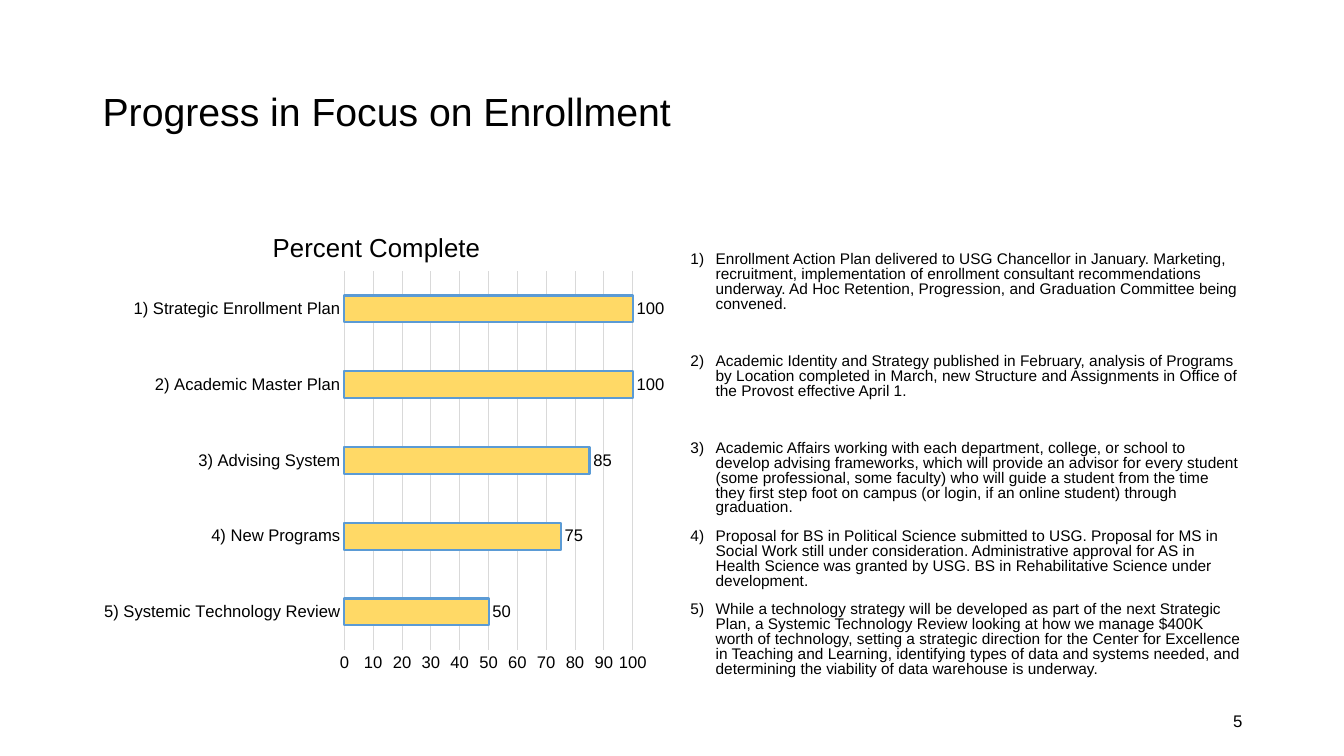
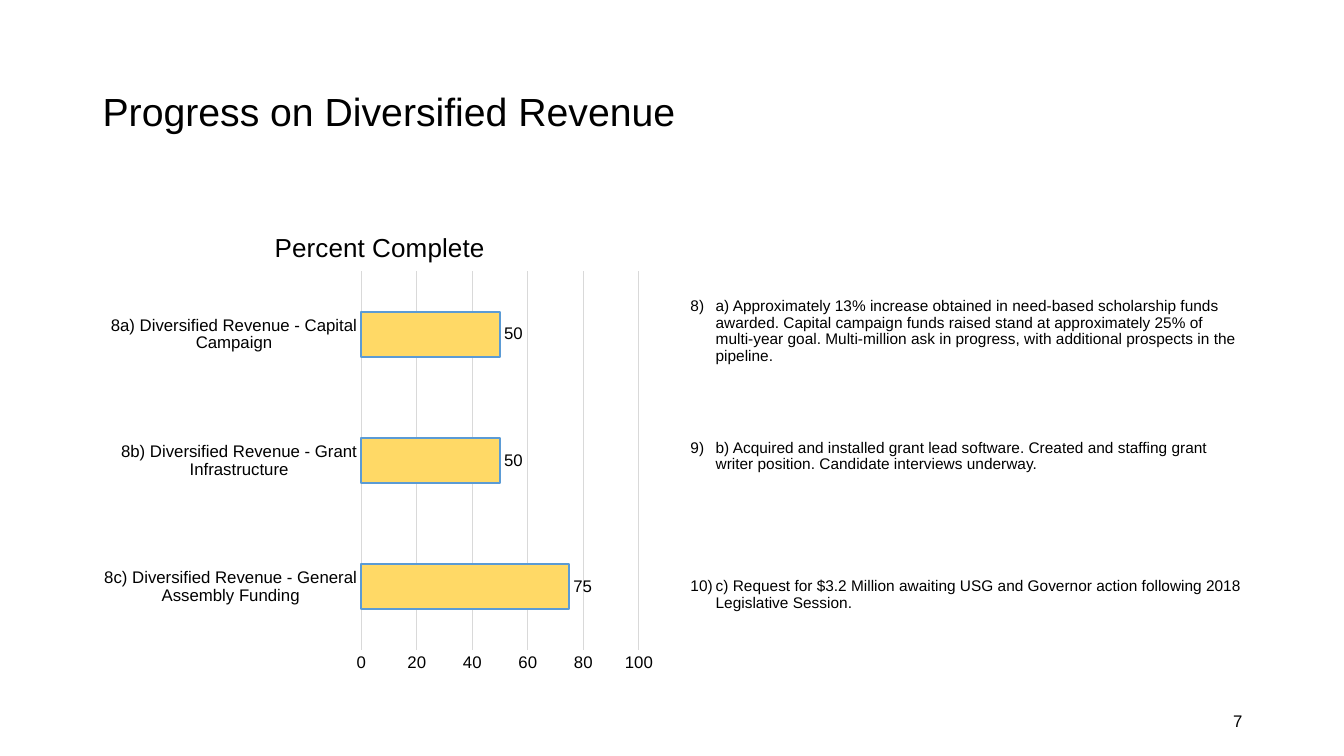
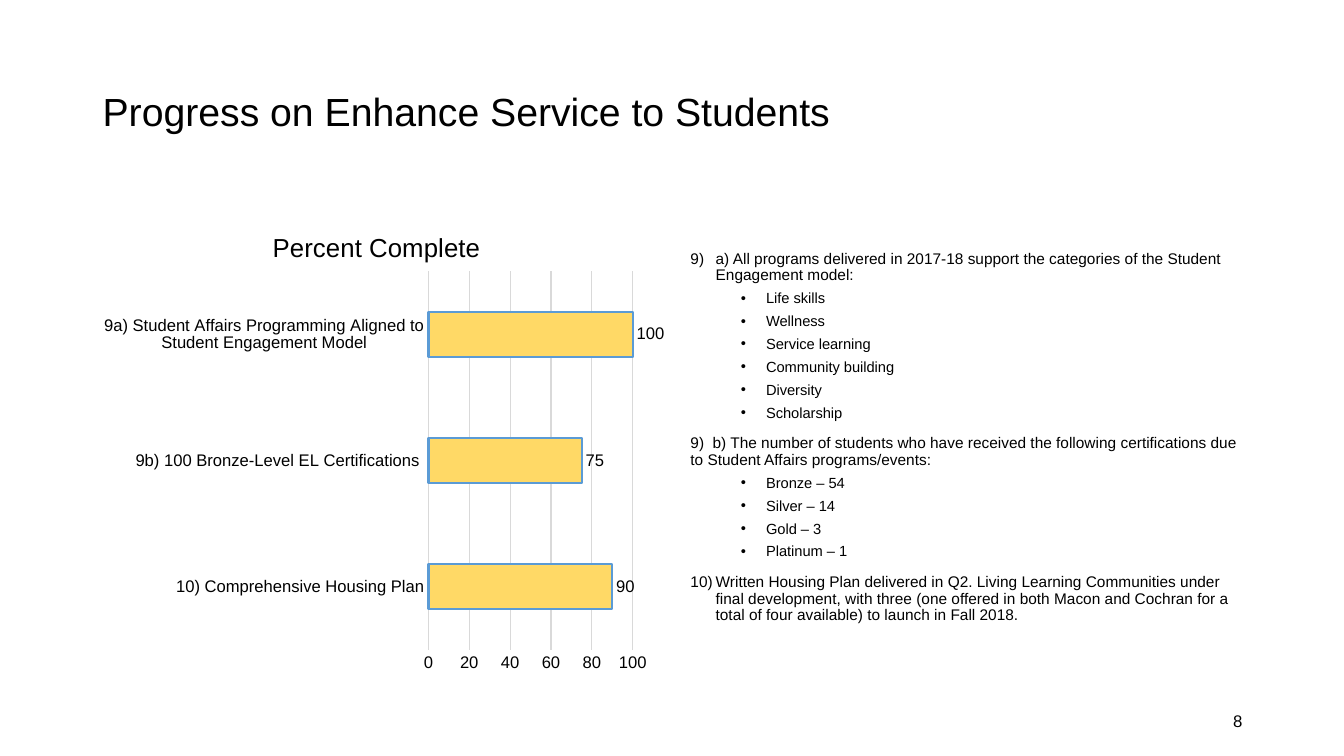
from dataclasses import dataclass
from typing import Optional

import pptx
import pptx.chart.data
import pptx.dml.color
import pptx.enum.chart
import pptx.enum.text
import pptx.oxml
import pptx.oxml.ns
import pptx.util

Inches = pptx.util.Inches
Pt = pptx.util.Pt

COLORS = {"text": "000000", "bar": "FFD966", "bar_edge": "5B9BD5", "grid": "D9D9D9", "paper": "FFFFFF"}
FONT = "Arial"
LINE_HEIGHT = 13.1


@dataclass(frozen=True)
class Remark:
    text: str
    number_from: Optional[int] = None
    sub: bool = False
    skipped_lines: int = 0


@dataclass(frozen=True)
class Progress:
    title: str
    page: str
    scale_step: int
    percents: dict[str, int]
    remarks: list[Remark]
    remarks_top: float
    spacing: float


def rgb(name: str) -> pptx.dml.color.RGBColor:
    return pptx.dml.color.RGBColor.from_string(COLORS[name])


def style_font(font, size: float) -> None:
    font.name = FONT
    font.size = Pt(size)
    font.bold = False
    font.color.rgb = rgb("text")


def style_line(line, color: str, width: float) -> None:
    line.color.rgb = rgb(color)
    line.width = Pt(width)


def add_frame(slide, left: float, top: float, width: float, height: float, middle: bool = False):
    frame = slide.shapes.add_textbox(Inches(left), Inches(top), Inches(width), Inches(height)).text_frame
    frame.word_wrap = True
    anchors = pptx.enum.text.MSO_ANCHOR
    frame.vertical_anchor = anchors.MIDDLE if middle else anchors.TOP
    return frame


def add_run(paragraph, text: str, size: float) -> None:
    run = paragraph.add_run()
    run.text = text
    style_font(run.font, size)


def add_xml(parent, tag: str, **attributes: str):
    child = pptx.oxml.parse_xml(f"<{tag} {pptx.oxml.ns.nsdecls(tag.split(':')[0])}/>")
    for key, value in attributes.items():
        child.set(key, value)
    parent.append(child)
    return child


def set_layout(element, **values: float) -> None:
    for existing in element.findall(pptx.oxml.ns.qn("c:layout")):
        element.remove(existing)
    layout = add_xml(element, "c:layout")
    manual = add_xml(layout, "c:manualLayout")
    if "w" in values:
        add_xml(manual, "c:layoutTarget", val="outer")
    for mode in ("xMode", "yMode"):
        add_xml(manual, f"c:{mode}", val="edge")
    for key, value in values.items():
        add_xml(manual, f"c:{key}", val=str(value))
    element.remove(layout)
    element.insert(1 if element.find(pptx.oxml.ns.qn("c:tx")) is not None else 0, layout)


def add_heading(slide, text: str) -> None:
    heading = add_frame(slide, 0.92, 0.4, 11.5, 1.45, middle=True).paragraphs[0]
    heading.line_spacing = 0.9
    add_run(heading, text, 28)


def add_page_number(slide, number: str) -> None:
    page = add_frame(slide, 9.42, 6.95, 3, 0.4, middle=True).paragraphs[0]
    page.alignment = pptx.enum.text.PP_ALIGN.RIGHT
    add_run(page, number, 12)


def add_progress_chart(slide, percents: dict[str, int], scale_step: int) -> None:
    bottom_up = list(reversed(percents.items()))
    data = pptx.chart.data.CategoryChartData(number_format="0")
    data.categories = [goal for goal, _ in bottom_up]
    data.add_series("Series 1", [percent for _, percent in bottom_up])
    kinds = pptx.enum.chart
    chart = slide.shapes.add_chart(
        kinds.XL_CHART_TYPE.BAR_CLUSTERED, Inches(0.92), Inches(2), Inches(5.67), Inches(4.76), data
    ).chart
    style_font(chart.font, 10)
    chart.has_legend = False
    chart.has_title = True
    add_run(chart.chart_title.text_frame.paragraphs[0], "Percent Complete", 18.6)
    chart.chart_title.include_in_layout = False
    set_layout(chart.chart_title._element, x=0.31, y=0.05)

    goals, scale = chart.category_axis, chart.value_axis
    for axis in (goals, scale):
        axis.major_tick_mark = axis.minor_tick_mark = kinds.XL_TICK_MARK.NONE
        style_font(axis.tick_labels.font, 12)
    goals.has_major_gridlines = False
    style_line(goals.format.line, "grid", 0.75)
    scale.minimum_scale, scale.maximum_scale, scale.major_unit = 0, 100, scale_step
    scale.format.line.fill.background()
    scale.has_major_gridlines = True
    style_line(scale.major_gridlines.format.line, "grid", 0.75)
    scale.tick_labels.number_format = "0"
    scale.tick_labels.number_format_is_linked = False

    plot = chart.plots[0]
    plot.gap_width = 182
    plot.vary_by_categories = False
    bars = plot.series[0]
    bars.format.fill.solid()
    bars.format.fill.fore_color.rgb = rgb("bar")
    style_line(bars.format.line, "bar_edge", 1.5)
    labels = bars.data_labels
    labels.show_value = True
    labels.number_format = "0"
    labels.number_format_is_linked = False
    labels.position = kinds.XL_LABEL_POSITION.OUTSIDE_END
    style_font(labels.font, 12)
    set_layout(chart._chartSpace.chart.plotArea, x=0.02, y=0.145, w=0.96, h=0.835)


def add_remarks(slide, remarks: list[Remark], top: float, spacing: float) -> None:
    frame = add_frame(slide, 6.75, top, 5.67, 6.76 - top)
    for index, remark in enumerate(remarks):
        paragraph = frame.paragraphs[0] if index == 0 else frame.add_paragraph()
        properties = paragraph._p.get_or_add_pPr()
        if remark.sub or remark.number_from:
            properties.set("marL", str(Inches(0.75 if remark.sub else 0.25)))
            properties.set("indent", str(-Inches(0.25)))
        if remark.sub:
            paragraph.level = 1
            add_xml(properties, "a:buFont", typeface=FONT)
            add_xml(properties, "a:buChar", char="•")
        elif remark.number_from:
            add_xml(properties, "a:buFont", typeface=FONT)
            add_xml(properties, "a:buAutoNum", type="arabicParenR", startAt=str(remark.number_from))
        elif "\t" in remark.text:
            stops = add_xml(properties, "a:tabLst")
            add_xml(stops, "a:tab", pos=str(Inches(0.22)), algn="l")
        paragraph.line_spacing = spacing
        if index:
            gap = 5 if remark.sub else 10
            paragraph.space_before = Pt(round(gap + remark.skipped_lines * (10 + LINE_HEIGHT * spacing), 1))
        add_run(paragraph, remark.text, 10.5 if remark.sub else 11)


def add_progress_slide(deck, progress: Progress) -> None:
    slide = deck.slides.add_slide(deck.slide_layouts[6])
    slide.background.fill.solid()
    slide.background.fill.fore_color.rgb = rgb("paper")
    add_heading(slide, progress.title)
    add_progress_chart(slide, progress.percents, progress.scale_step)
    add_remarks(slide, progress.remarks, progress.remarks_top, progress.spacing)
    add_page_number(slide, progress.page)


SKILLS = ["Life skills", "Wellness", "Service learning", "Community building", "Diversity", "Scholarship"]
CERTIFICATIONS = ["Bronze – 54", "Silver – 14", "Gold – 3", "Platinum – 1"]

PROGRESS = [
    Progress(
        "Progress in Focus on Enrollment", "5", 10,
        {
            "1) Strategic Enrollment Plan": 100,
            "2) Academic Master Plan": 100,
            "3) Advising System": 85,
            "4) New Programs": 75,
            "5) Systemic Technology Review": 50,
        },
        [
            Remark("Enrollment Action Plan delivered to USG Chancellor in January. Marketing, recruitment, "
                   "implementation of enrollment consultant recommendations underway. Ad Hoc Retention, "
                   "Progression, and Graduation Committee being convened.", 1),
            Remark("Academic Identity and Strategy published in February, analysis of Programs by Location "
                   "completed in March, new Structure and Assignments in Office of the Provost effective "
                   "April 1.", 1, skipped_lines=1),
            Remark("Academic Affairs working with each department, college, or school to develop advising "
                   "frameworks, which will provide an advisor for every student (some professional, some "
                   "faculty) who will guide a student from the time they first step foot on campus (or login, "
                   "if an online student) through graduation.", 1, skipped_lines=1),
            Remark("Proposal for BS in Political Science submitted to USG. Proposal for MS in Social Work "
                   "still under consideration. Administrative approval for AS in Health Science was granted "
                   "by USG. BS in Rehabilitative Science under development.", 1),
            Remark("While a technology strategy will be developed as part of the next Strategic Plan, a "
                   "Systemic Technology Review looking at how we manage $400K worth of technology, setting a "
                   "strategic direction for the Center for Excellence in Teaching and Learning, identifying "
                   "types of data and systems needed, and determining the viability of data warehouse is "
                   "underway.", 1),
        ],
        2.46, 0.8,
    ),
    Progress(
        "Progress on Diversified Revenue", "7", 20,
        {
            "8a) Diversified Revenue - Capital Campaign": 50,
            "8b) Diversified Revenue - Grant Infrastructure": 50,
            "8c) Diversified Revenue - General Assembly Funding": 75,
        },
        [
            Remark("a) Approximately 13% increase obtained in need-based scholarship funds awarded. Capital "
                   "campaign funds raised stand at approximately 25% of multi-year goal. Multi-million ask in "
                   "progress, with additional prospects in the pipeline.", 8),
            Remark("b) Acquired and installed grant lead software. Created and staffing grant writer "
                   "position. Candidate interviews underway.", 8, skipped_lines=2),
            Remark("c) Request for $3.2 Million awaiting USG and Governor action following 2018 Legislative "
                   "Session.", 8, skipped_lines=3),
        ],
        2.91, 0.9,
    ),
    Progress(
        "Progress on Enhance Service to Students", "8", 20,
        {
            "9a) Student Affairs Programming Aligned to Student Engagement Model": 100,
            "9b) 100 Bronze-Level EL Certifications ": 75,
            "10) Comprehensive Housing Plan": 90,
        },
        [
            Remark("a) All programs delivered in 2017-18 support the categories of the Student Engagement "
                   "model:", 9),
            *[Remark(skill, sub=True) for skill in SKILLS],
            Remark("9)\tb) The number of students who have received the following certifications due to "
                   "Student Affairs programs/events:"),
            *[Remark(certification, sub=True) for certification in CERTIFICATIONS],
            Remark("Written Housing Plan delivered in Q2. Living Learning Communities under final "
                   "development, with three (one offered in both Macon and Cochran for a total of four "
                   "available) to launch in Fall 2018.", 10),
        ],
        2.44, 0.9,
    ),
]


def main() -> None:
    deck = pptx.Presentation()
    deck.slide_width, deck.slide_height = Inches(13.33), Inches(7.5)
    for progress in PROGRESS:
        add_progress_slide(deck, progress)
    deck.save("out.pptx")


if __name__ == "__main__":
    main()
